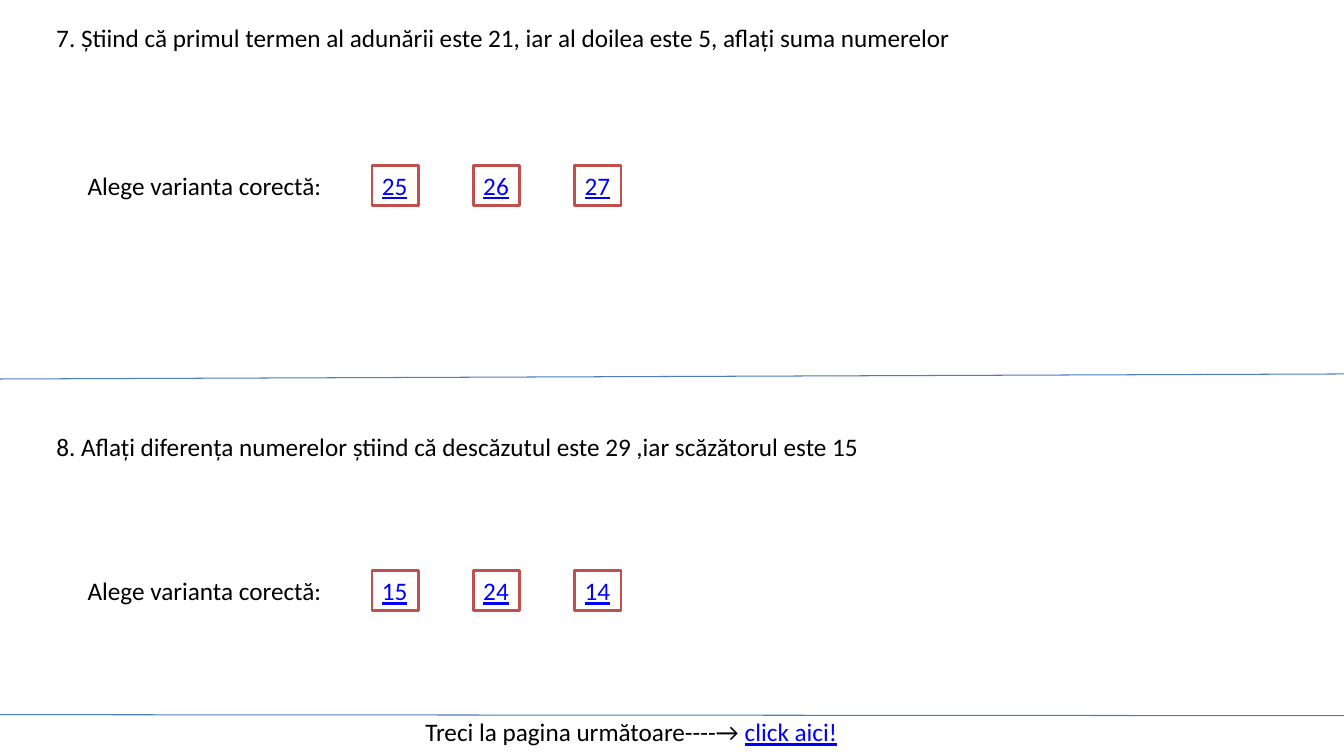
from dataclasses import dataclass

from lxml import etree
from pptx import Presentation
from pptx.dml.color import RGBColor
from pptx.enum.shapes import MSO_CONNECTOR, MSO_SHAPE
from pptx.enum.text import MSO_ANCHOR, MSO_AUTO_SIZE, PP_ALIGN
from pptx.oxml.ns import qn
from pptx.util import Inches, Pt

STRAIGHT = MSO_CONNECTOR.STRAIGHT
RECTANGLE = MSO_SHAPE.RECTANGLE
MIDDLE = MSO_ANCHOR.MIDDLE
GROW = MSO_AUTO_SIZE.SHAPE_TO_FIT_TEXT
LEFT = PP_ALIGN.LEFT

PAGE_WIDTH, PAGE_HEIGHT = 13.33, 7.5
ROW_HEIGHT = 0.4
PROMPT_INDENT, PROMPT_WIDTH = 0.31, 2.55
ANSWER_INDENT, ANSWER_PITCH, ANSWER_WIDTH = 3.23, 1.005, 0.46
PROMPT = "Alege varianta corectă:"


@dataclass(frozen=True)
class Theme:
    font: str = "Calibri"
    size: float = 18
    ink: str = "000000"
    link: str = "0000FF"
    paper: str = "FFFFFF"
    frame: str = "C0504D"
    frame_width: float = 2
    rule: str = "4B7EBC"
    rule_width: float = 0.75


THEME = Theme()


def color(code):
    return RGBColor.from_string(code)


def style_span(span, linked=False):
    span.font.name = THEME.font
    span.font.size = Pt(THEME.size)
    span.font.color.rgb = color(THEME.link if linked else THEME.ink)
    if linked:
        span.font.underline = True


def fill_text(shape, text, linked=False):
    frame = shape.text_frame
    frame.text = text
    frame.word_wrap = False
    frame.auto_size = GROW
    frame.vertical_anchor = MIDDLE
    para = frame.paragraphs[0]
    para.alignment = LEFT
    style_span(para.runs[0], linked)
    return para


def add_text(page, box, text):
    shape = page.shapes.add_textbox(*map(Inches, box))
    return fill_text(shape, text)


def add_answer(page, box, text):
    shape = page.shapes.add_shape(RECTANGLE, *map(Inches, box))
    shape.shadow.inherit = False
    shape.fill.solid()
    shape.fill.fore_color.rgb = color(THEME.paper)
    shape.line.color.rgb = color(THEME.frame)
    shape.line.width = Pt(THEME.frame_width)
    fill_text(shape, text, linked=True)


def add_divider(page, start_y, end_y):
    rule = page.shapes.add_connector(
        STRAIGHT, 0, Inches(start_y), Inches(PAGE_WIDTH), Inches(end_y))
    rule.line.color.rgb = color(THEME.rule)
    rule.line.width = Pt(THEME.rule_width)
    etree.SubElement(rule.element.spPr, qn("a:effectLst"))


def add_exercise(page, box, question, answers):
    left, top, width, height = box
    answer_top = top + height - ROW_HEIGHT
    add_text(page, (left, top, width, ROW_HEIGHT), question)
    add_text(page, (left + PROMPT_INDENT, answer_top, PROMPT_WIDTH, ROW_HEIGHT), PROMPT)
    for column, answer in enumerate(answers):
        answer_left = left + ANSWER_INDENT + column * ANSWER_PITCH
        add_answer(page, (answer_left, answer_top, ANSWER_WIDTH, ROW_HEIGHT), answer)


def add_footer(page, box):
    para = add_text(page, box, "Treci la pagina următoare----→ ")
    link = para.add_run()
    link.text = "click aici!"
    style_span(link, linked=True)


def main():
    deck = Presentation()
    deck.slide_width, deck.slide_height = Inches(PAGE_WIDTH), Inches(PAGE_HEIGHT)
    page = deck.slides.add_slide(deck.slide_layouts[6])
    add_divider(page, 3.76, 3.71)
    add_divider(page, 7.09, 7.1)
    add_exercise(
        page, (0.46, 0.17, 9.17, 1.87),
        "7. Știind că primul termen al adunării este 21, iar al doilea este 5, aflați suma numerelor",
        ("25", "26", "27"))
    add_exercise(
        page, (0.46, 4.23, 8.25, 1.83),
        "8. Aflați diferența numerelor știind că descăzutul este 29 ,iar scăzătorul este 15",
        ("15", "24", "14"))
    add_footer(page, (4.12, 7.06, 4.35, ROW_HEIGHT))
    deck.save("out.pptx")


if __name__ == "__main__":
    main()
